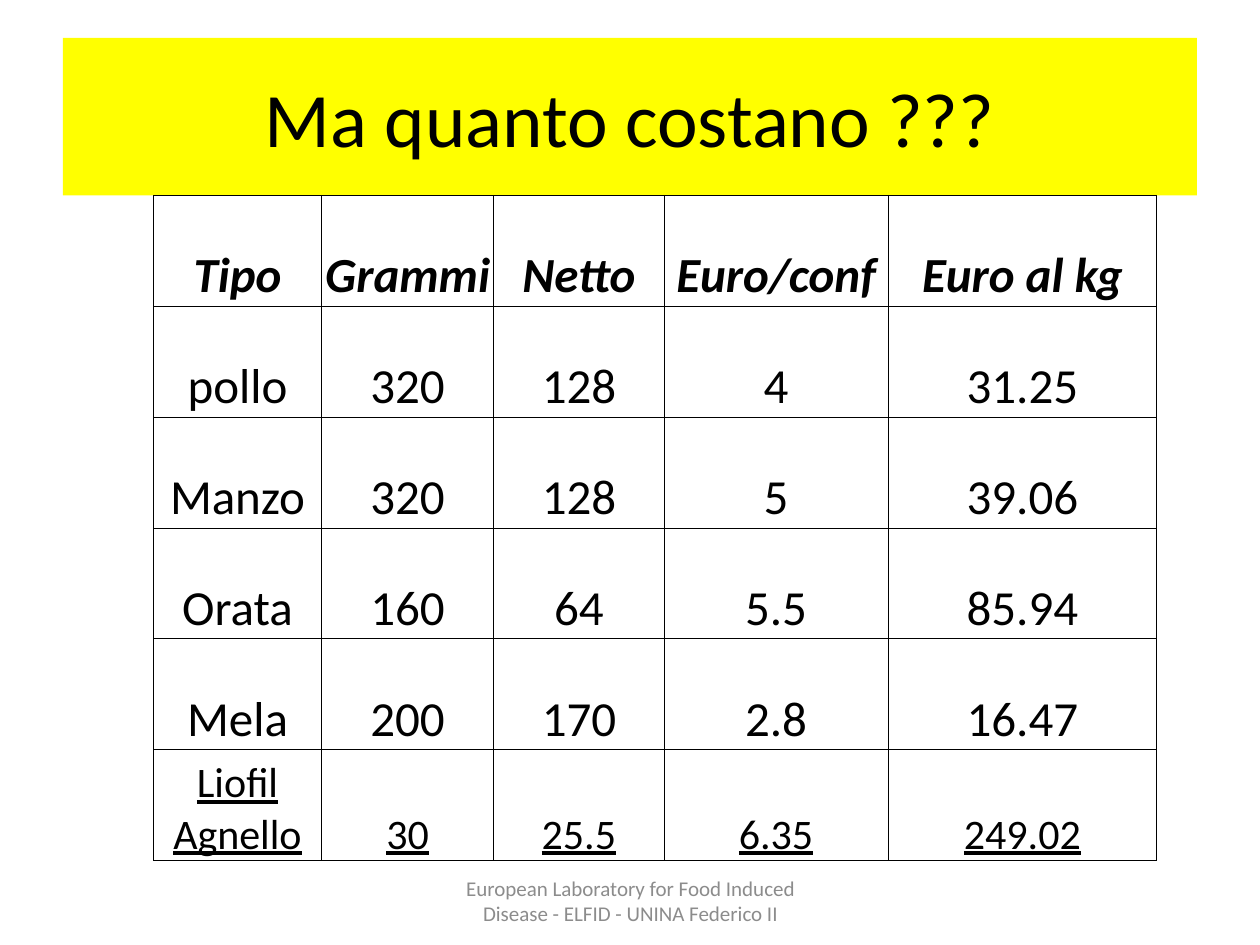
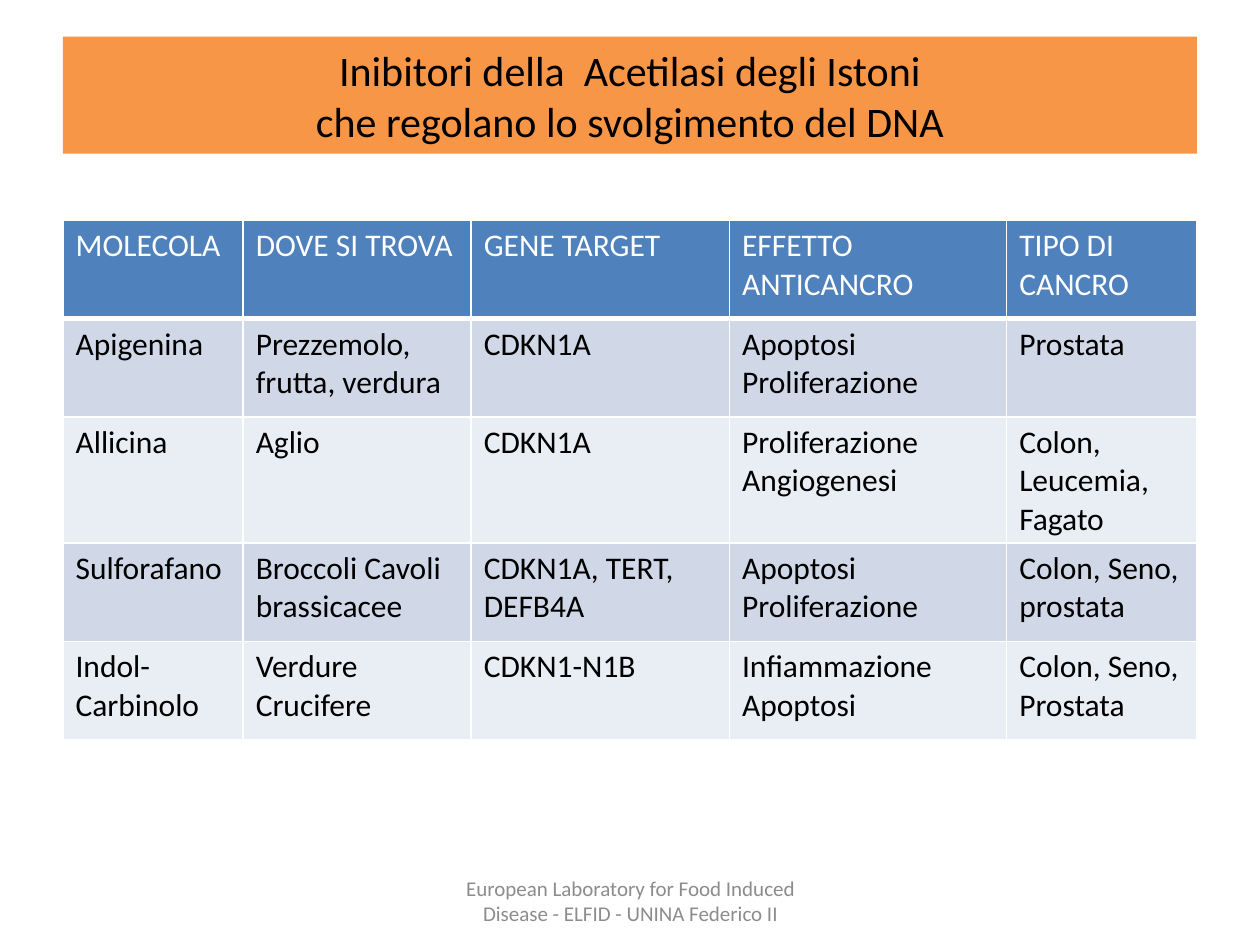
from collections import namedtuple

from lxml import etree
from pptx import Presentation
from pptx.dml.color import RGBColor
from pptx.enum.shapes import MSO_SHAPE
from pptx.enum.text import MSO_ANCHOR, PP_ALIGN
from pptx.oxml.ns import qn
from pptx.util import Inches, Pt

RECTANGLE = MSO_SHAPE.RECTANGLE
TOP, MIDDLE, BOTTOM = MSO_ANCHOR.TOP, MSO_ANCHOR.MIDDLE, MSO_ANCHOR.BOTTOM
LEFT, CENTER = PP_ALIGN.LEFT, PP_ALIGN.CENTER

BLACK = RGBColor(0x00, 0x00, 0x00)
WHITE = RGBColor(0xFF, 0xFF, 0xFF)
YELLOW = RGBColor(0xFF, 0xFF, 0x00)
ORANGE = RGBColor(0xF7, 0x96, 0x46)
HEADER_BLUE = RGBColor(0x4F, 0x81, 0xBD)
BAND_DARK = RGBColor(0xD0, 0xD8, 0xE8)
BAND_LIGHT = RGBColor(0xE9, 0xED, 0xF4)
FOOTER_GREY = RGBColor(0x8C, 0x8C, 0x8C)

FONT = "Calibri"
SLIDE_WIDTH, SLIDE_HEIGHT = 10, 7.5
MARGIN = 0.05 * SLIDE_WIDTH
CONTENT_WIDTH = SLIDE_WIDTH - 2 * MARGIN
FOOTER = "European Laboratory for Food Induced Disease - ELFID - UNINA Federico II"

Box = namedtuple("Box", "left top width height")
FOOTER_BOX = Box(3.42, 6.95, 3.17, 0.4)

PRICES = [
    ["Tipo", "Grammi", "Netto", "Euro/conf", "Euro al kg"],
    ["pollo", "320", "128", "4", "31.25"],
    ["Manzo", "320", "128", "5", "39.06"],
    ["Orata", "160", "64", "5.5", "85.94"],
    ["Mela", "200", "170", "2.8", "16.47"],
    ["Liofil Agnello", "30", "25.5", "6.35", "249.02"],
]
PRICE_COLUMNS = [1.33, 1.37, 1.35, 1.78, 2.13]

INHIBITORS = [
    ["MOLECOLA", "DOVE SI TROVA", "GENE TARGET", "EFFETTO ANTICANCRO",
     "TIPO DI CANCRO"],
    ["Apigenina", "Prezzemolo, frutta, verdura", "CDKN1A",
     "Apoptosi Proliferazione", "Prostata"],
    ["Allicina", "Aglio", "CDKN1A", "Proliferazione Angiogenesi",
     "Colon, Leucemia, Fagato"],
    ["Sulforafano", "Broccoli Cavoli brassicacee", "CDKN1A, TERT, DEFB4A",
     "Apoptosi Proliferazione", "Colon, Seno, prostata"],
    ["Indol-Carbinolo", "Verdure Crucifere", "CDKN1-N1B",
     "Infiammazione Apoptosi", "Colon, Seno, Prostata"],
]
INHIBITOR_COLUMNS = [1.43, 1.81, 2.05, 2.2, 1.51]


def inches(box):
    return [Inches(length) for length in box]


def style_text(frame, size, color, align, bold=False, italic=False,
               underline=False):
    for paragraph in frame.paragraphs:
        paragraph.alignment = align
        font = paragraph.font
        font.name, font.size, font.color.rgb = FONT, Pt(size), color
        font.bold, font.italic, font.underline = bold, italic, underline


def add_title(slide, box, text, size, band_color):
    band = slide.shapes.add_shape(RECTANGLE, *inches(box))
    band.shadow.inherit = False
    band.fill.solid()
    band.fill.fore_color.rgb = band_color
    band.line.fill.background()
    frame = band.text_frame
    frame.word_wrap = True
    frame.vertical_anchor = MIDDLE
    frame.text = text
    style_text(frame, size, BLACK, CENTER)


def add_footer(slide):
    frame = slide.shapes.add_textbox(*inches(FOOTER_BOX)).text_frame
    frame.word_wrap = True
    frame.vertical_anchor = MIDDLE
    frame.text = FOOTER
    style_text(frame, 12, FOOTER_GREY, CENTER)


def set_borders(cell, color, width, bottom_width):
    properties = cell._tc.get_or_add_tcPr()
    for side in "LRTB":
        points = bottom_width if side == "B" else width
        line = etree.SubElement(properties, qn(f"a:ln{side}"), w=str(Pt(points)))
        fill = etree.SubElement(line, qn("a:solidFill"))
        etree.SubElement(fill, qn("a:srgbClr"), val=str(color))


def add_grid(slide, left, top, columns, row_height, rows, style_cell):
    """Add a table whose cells are finished by style_cell(cell, row_index)."""
    box = Box(left, top, sum(columns), row_height * len(rows))
    table = slide.shapes.add_table(len(rows), len(columns), *inches(box)).table
    table.first_row = table.horz_banding = False
    for column, width in zip(table.columns, columns):
        column.width = Inches(width)
    for r, row in enumerate(rows):
        for c, text in enumerate(row):
            cell = table.cell(r, c)
            cell.text = text
            style_cell(cell, r)


def style_price(cell, row):
    is_header, is_last = row == 0, row == len(PRICES) - 1
    cell.margin_left = cell.margin_right = cell.margin_top = Inches(0.01)
    cell.margin_bottom = 0
    cell.vertical_anchor = BOTTOM
    set_borders(cell, BLACK, 0.5, 0.5)
    cell.fill.background()
    style_text(cell.text_frame, 24 if is_last else 28, BLACK, CENTER,
               bold=is_header, italic=is_header, underline=is_last)


def style_inhibitor(cell, row):
    is_header = row == 0
    cell.vertical_anchor = TOP
    set_borders(cell, WHITE, 1, 3 if is_header else 1)
    cell.fill.solid()
    band = BAND_DARK if row % 2 else BAND_LIGHT
    cell.fill.fore_color.rgb = HEADER_BLUE if is_header else band
    style_text(cell.text_frame, 18, WHITE if is_header else BLACK, LEFT)


def build_prices(slide):
    add_title(slide, Box(MARGIN, 0.3, CONTENT_WIDTH, 1.25),
              "Ma quanto costano ???", 44, YELLOW)
    add_grid(slide, 1.22, 1.55, PRICE_COLUMNS, 0.88, PRICES, style_price)
    add_footer(slide)


def build_inhibitors(slide):
    add_title(slide, Box(MARGIN, 0.29, CONTENT_WIDTH, 0.93),
              "Inibitori della  Acetilasi degli Istoni\v"
              "che regolano lo svolgimento del DNA", 24, ORANGE)
    add_grid(slide, MARGIN, 1.75, INHIBITOR_COLUMNS, 0.78, INHIBITORS,
             style_inhibitor)
    add_footer(slide)


def main():
    deck = Presentation()
    deck.slide_width, deck.slide_height = Inches(SLIDE_WIDTH), Inches(SLIDE_HEIGHT)
    blank = deck.slide_layouts[6]
    for build in (build_prices, build_inhibitors):
        build(deck.slides.add_slide(blank))
    deck.save("out.pptx")


if __name__ == "__main__":
    main()
